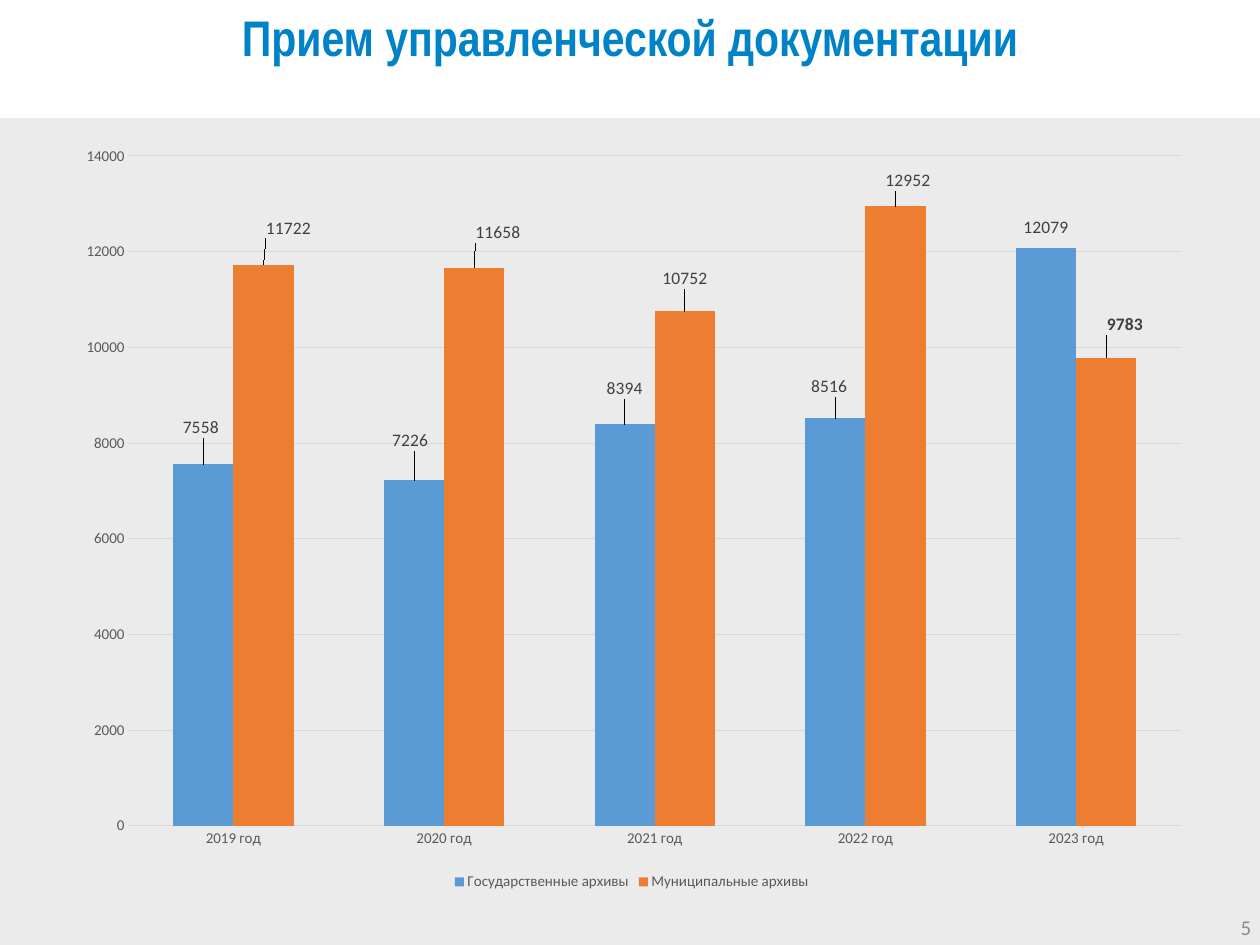
from lxml.etree import SubElement
from pptx import Presentation
from pptx.chart.data import CategoryChartData
from pptx.dml.color import RGBColor
from pptx.enum.chart import XL_CHART_TYPE, XL_LABEL_POSITION, XL_LEGEND_POSITION, XL_TICK_MARK
from pptx.enum.shapes import MSO_SHAPE
from pptx.enum.text import MSO_ANCHOR, PP_ALIGN
from pptx.oxml.ns import qn
from pptx.util import Pt

WIDE, HIGH = 1008, 756
YEARS = [f"{year} год" for year in range(2019, 2024)]
SERIES = [
    ("Государственные архивы", "5B9BD5", [7558, 7226, 8394, 8516, 12079],
     [(-2, -18), (-3, -20), (0, -17), (-5, -14), (0, -5)]),
    ("Муниципальные архивы", "ED7D31", [11722, 11658, 10752, 12952, 9783],
     [(20, -18), (19, -17), (0, -15), (10, -9), (15, -15)]),
]
TITLE = {"name": "Arial Narrow", "size": Pt(40), "bold": True}
PAGE = {"name": "Calibri", "size": Pt(16.8)}
AXIS = {"name": "Calibri", "size": Pt(12), "bold": False}
LABEL = {"name": "Calibri", "size": Pt(14), "bold": False}
FRAME = {"margin_left": Pt(7.2), "margin_right": Pt(7.2),
         "margin_top": Pt(3.6), "margin_bottom": Pt(3.6), "word_wrap": True}


def paint(form, color):
    if hasattr(form, "solid"):
        form.solid()
        form = form.fore_color
    form.rgb = RGBColor.from_string(color)


def apply(item, values):
    for key, value in values.items():
        setattr(item, key, value)


def style(font, values, color):
    apply(font, values)
    paint(font.color, color)


def place(shape, box):
    apply(shape, dict(zip(("left", "top", "width", "height"), map(Pt, box))))


def write(shape, text, values, color, align, anchor):
    frame = shape.text_frame
    frame.text = text
    apply(frame, {**FRAME, "vertical_anchor": anchor})
    line = frame.paragraphs[0]
    line.alignment = align
    style(line.runs[0].font, values, color)


def add_panel(slide, box, color, edge=None):
    panel = slide.shapes.add_shape(MSO_SHAPE.RECTANGLE, *map(Pt, box))
    panel.shadow.inherit = False
    paint(panel.fill, color)
    if edge:
        paint(panel.line.fill, edge)
        panel.line.width = Pt(1)
    else:
        panel.line.fill.background()


def add_title(slide, box, text):
    title = slide.shapes.title
    slide.shapes.element.append(title.element)
    place(title, box)
    write(title, text, TITLE, "0082C8", PP_ALIGN.CENTER, MSO_ANCHOR.TOP)


def add_page(slide, box, text):
    page = slide.shapes.add_textbox(*map(Pt, box))
    write(page, text, PAGE, "8C8C8C", PP_ALIGN.RIGHT, MSO_ANCHOR.MIDDLE)


def set_layout(parent, index, **parts):
    for old in parent.findall(qn("c:layout")):
        parent.remove(old)
    layout = SubElement(parent, qn("c:layout"))
    parent.insert(index, layout)
    manual = SubElement(layout, qn("c:manualLayout"))
    for key, value in parts.items():
        SubElement(manual, qn(f"c:{key}")).set("val", str(value))


def add_chart(slide, box):
    data = CategoryChartData()
    data.categories = YEARS
    for name, _, values, _ in SERIES:
        data.add_series(name, values)
    chart = slide.shapes.add_chart(
        XL_CHART_TYPE.COLUMN_CLUSTERED, *map(Pt, box), data).chart
    chart.has_title = False
    style(chart.font, {"name": "Calibri", "size": Pt(10)}, "000000")
    chart.has_legend = True
    apply(chart.legend, {"position": XL_LEGEND_POSITION.BOTTOM, "include_in_layout": False})
    style(chart.legend.font, AXIS, "595959")
    for axis in (chart.category_axis, chart.value_axis):
        apply(axis, {"major_tick_mark": XL_TICK_MARK.NONE, "minor_tick_mark": XL_TICK_MARK.NONE})
        axis.format.line.fill.background()
        style(axis.tick_labels.font, AXIS, "595959")
    apply(chart.value_axis, {"minimum_scale": 0, "maximum_scale": 14000,
                             "major_unit": 2000, "has_major_gridlines": True})
    grid = chart.value_axis.major_gridlines.format.line
    paint(grid.fill, "D9D9D9")
    grid.width = Pt(0.75)
    plot = chart.plots[0]
    apply(plot, {"gap_width": 75, "overlap": 0, "vary_by_categories": False})
    plot.gap_width = 150
    area = chart.element.find(f".//{qn('c:plotArea')}")
    set_layout(area, 0, layoutTarget="inner", xMode="edge", yMode="edge",
               x=0.06, y=0.03, w=0.92, h=0.88)
    for series, (_, color, values, shifts) in zip(plot.series, SERIES):
        paint(series.format.fill, color)
        apply(series.data_labels, {"show_value": True, "position": XL_LABEL_POSITION.OUTSIDE_END})
        style(series.data_labels.font, {**LABEL, "bold": True}, "404040")
        for index, (value, (dx, dy)) in enumerate(zip(values, shifts)):
            label = series.points[index].data_label
            style(label.font, {**LABEL, "bold": value == 9783}, "404040")
            label.position = XL_LABEL_POSITION.OUTSIDE_END
            spot = series.data_labels._element.findall(qn("c:dLbl"))[index]
            set_layout(spot, 1, x=dx / box[2], y=dy / box[3])


def main():
    deck = Presentation()
    apply(deck, {"slide_width": Pt(WIDE), "slide_height": Pt(HIGH)})
    slide = deck.slides.add_slide(deck.slide_layouts[5])
    add_panel(slide, (0, 0, WIDE, 72), "FFFFFF", "FFFFFF")
    add_panel(slide, (0, 94.5, WIDE, HIGH - 94.5), "EBEBEB")
    add_title(slide, (0, 1.5, WIDE, 55.5), "Прием управленческой документации")
    add_page(slide, (781, 721.5, 227, 40.5), "5")
    add_chart(slide, (47.5, 106.5, 916, 609))
    deck.save("out.pptx")


if __name__ == "__main__":
    main()
